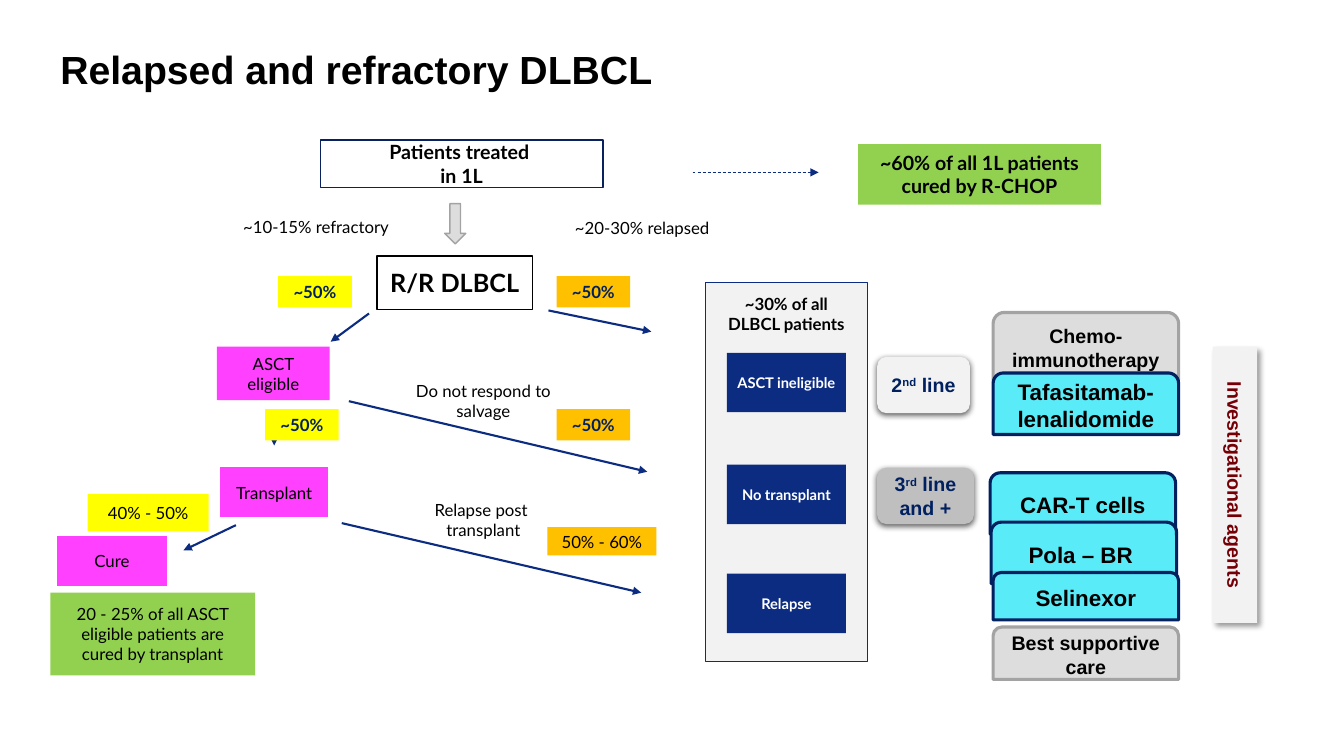
import pptx
import pptx.dml.color
import pptx.enum.dml
import pptx.enum.shapes
import pptx.enum.text
import pptx.oxml
import pptx.oxml.ns
import pptx.util

Inches = pptx.util.Inches
Pt = pptx.util.Pt
RGBColor = pptx.dml.color.RGBColor
SHAPE = pptx.enum.shapes.MSO_SHAPE
ANCHOR = pptx.enum.text.MSO_ANCHOR
ALIGN = pptx.enum.text.PP_ALIGN

BLACK = RGBColor(0x00, 0x00, 0x00)
WHITE = RGBColor(0xFF, 0xFF, 0xFF)
BLUE = RGBColor(0x0C, 0x2C, 0x81)
DEEP_BLUE = RGBColor(0x09, 0x21, 0x5F)
NAVY = RGBColor(0x00, 0x20, 0x60)
CYAN = RGBColor(0x59, 0xEB, 0xF8)
GREEN = RGBColor(0x92, 0xD0, 0x50)
YELLOW = RGBColor(0xFF, 0xFF, 0x00)
ORANGE = RGBColor(0xFF, 0xC0, 0x00)
MAGENTA = RGBColor(0xFF, 0x40, 0xFF)
DARK_RED = RGBColor(0x74, 0x00, 0x05)
PALE_GREY = RGBColor(0xF2, 0xF2, 0xF2)
LIGHT_GREY = RGBColor(0xDD, 0xDD, 0xDD)
MID_GREY = RGBColor(0xBF, 0xBF, 0xBF)
EDGE_GREY = RGBColor(0xA3, 0xA3, 0xA3)


class Diagram:
    """Style and current slide of the treatment pathway."""

    body_font = "Lato"
    heading_font = "Arial"

    def __init__(self, page):
        self.page = page

    def set_text(self, shape, text, size=12, color=BLACK, bold=False, font=None,
                 align=ALIGN.CENTER, anchor=ANCHOR.MIDDLE, side=0.1):
        """Put text in a shape; parts between ^ marks are superscript."""
        frame = shape.text_frame
        frame.word_wrap = True
        frame.vertical_anchor = anchor
        frame.margin_left = frame.margin_right = Inches(side)
        for index, line in enumerate(text.split("\n")):
            para = frame.add_paragraph() if index else frame.paragraphs[0]
            para.alignment = align
            para.font.name = font or self.body_font
            para.font.size = Pt(size)
            para.font.bold = bold
            para.font.color.rgb = color
            for part, words in enumerate(line.split("^")):
                span = para.add_run()
                span.text = words
                if part % 2:
                    span._r.get_or_add_rPr().set("baseline", "30000")

    def label(self, at, text, **style):
        box = self.page.shapes.add_textbox(*map(Inches, at))
        self.set_text(box, text, **style)
        return box

    def box(self, at, fill=None, text="", line=None, width=1, kind=SHAPE.RECTANGLE, **style):
        box = self.page.shapes.add_shape(kind, *map(Inches, at))
        box.shadow.inherit = False
        if fill is None:
            box.fill.background()
        else:
            box.fill.solid()
            box.fill.fore_color.rgb = fill
        if line is None:
            box.line.fill.background()
        else:
            box.line.color.rgb = line
            box.line.width = Pt(width)
        if text:
            self.set_text(box, text, **style)
        return box

    def cast_shadow(self, box, alpha, blur, distance, angle):
        effects = box._element.spPr.find(pptx.oxml.ns.qn("a:effectLst"))
        effects.append(pptx.oxml.parse_xml(
            f'<a:outerShdw {pptx.oxml.ns.nsdecls("a")} blurRad="{Pt(blur)}" dist="{Pt(distance)}" '
            f'dir="{angle * 60000}" algn="ctr" rotWithShape="0"><a:srgbClr val="000000">'
            f'<a:alpha val="{alpha * 1000}"/></a:srgbClr></a:outerShdw>'))

    def arrow(self, start, end, width=1.5, dash=None):
        arrow = self.page.shapes.add_connector(
            pptx.enum.shapes.MSO_CONNECTOR.STRAIGHT, *map(Inches, start + end))
        arrow.line.color.rgb = BLUE
        arrow.line.width = Pt(width)
        if dash:
            arrow.line.dash_style = dash
        namespace = pptx.oxml.ns.nsdecls("a")
        arrow.line._get_or_add_ln().append(
            pptx.oxml.parse_xml(f'<a:tailEnd {namespace} type="triangle"/>'))
        arrow._element.spPr.append(pptx.oxml.parse_xml(f"<a:effectLst {namespace}/>"))

    def therapy(self, at, text, fill=CYAN, line=NAVY, size=16):
        self.box(at, fill, text, line, 2.25, SHAPE.ROUND_2_SAME_RECTANGLE,
                 size=size, bold=True, font=self.heading_font)


def main():
    deck = pptx.Presentation()
    deck.slide_width, deck.slide_height = Inches(13.33), Inches(7.5)
    diagram = Diagram(deck.slides.add_slide(deck.slide_layouts[6]))

    # Title
    title = diagram.label((0.5, 0.03, 11.5, 0.94), "Relapsed and refractory DLBCL", size=28,
                          bold=True, font=diagram.heading_font,
                          align=ALIGN.LEFT, anchor=ANCHOR.BOTTOM)
    title.text_frame.paragraphs[0].line_spacing = 0.9

    # Arrows between the stages
    diagram.arrow((6.87, 1.71), (8.12, 1.71), 0.5, pptx.enum.dml.MSO_LINE.DASH)
    for start, end in [
        ((3.66, 3.11), (3.28, 3.39)),
        ((5.44, 3.08), (6.46, 3.29)),
        ((2.72, 4.09), (2.72, 4.42)),
        ((3.46, 3.98), (6.42, 4.68)),
        ((3.39, 5.19), (6.36, 5.88)),
        ((2.34, 5.21), (1.82, 5.46)),
    ]:
        diagram.arrow(start, end)

    # First line of treatment
    diagram.box((3.18, 1.39, 2.8, 0.47), WHITE, "Patients treated \nin 1L", DEEP_BLUE,
                size=14, bold=True)
    diagram.box((8.51, 1.43, 2.41, 0.6), GREEN, "~60% of all 1L patients cured by R-CHOP",
                size=14, bold=True)
    diagram.box((4.41, 2.02, 0.21, 0.4), LIGHT_GREY, line=EDGE_GREY, kind=SHAPE.DOWN_ARROW)
    diagram.box((3.74, 2.54, 1.54, 0.53), text="R/R DLBCL", line=BLACK, size=18, bold=True)

    # Transplant pathway
    diagram.box((2.15, 3.44, 1.12, 0.53), MAGENTA, "ASCT eligible")
    diagram.box((2.17, 4.62, 1.1, 0.53), MAGENTA, "Transplant", WHITE, 2.25)
    diagram.box((0.55, 5.3, 1.12, 0.53), MAGENTA, "Cure", WHITE, 2.25)
    diagram.box((0.5, 5.88, 2.03, 0.82), GREEN,
                "20 - 25% of all ASCT eligible patients are cured by transplant")

    # Shares at each branch
    for left, top, fill in [(2.76, 2.74, YELLOW), (5.52, 2.74, ORANGE),
                            (2.63, 4.06, YELLOW), (5.52, 4.06, ORANGE)]:
        diagram.box((left, top, 0.73, 0.31), fill, "~50%", color=NAVY, bold=True)
    diagram.box((0.87, 4.9, 1.2, 0.37), YELLOW, "40% - 50%")
    diagram.box((5.43, 5.23, 1.08, 0.28), ORANGE, "50% - 60%")

    # Branch labels
    diagram.label((2.17, 2.07, 1.93, 0.37), "~10-15% refractory")
    diagram.label((5.25, 2.08, 2.24, 0.37), "~20-30% relapsed")
    diagram.label((3.83, 3.79, 1.93, 0.37), "Do not respond to salvage")
    diagram.label((3.83, 4.97, 1.93, 0.37), "Relapse post \ntransplant")

    # Patients without a cure
    diagram.box((7, 2.8, 1.6, 3.76), PALE_GREY, line=BLUE, width=0.75)
    diagram.label((7.02, 2.89, 1.56, 0.44), "~30% of all DLBCL patients", bold=True)
    for top, text in [(3.5, "ASCT ineligible"), (4.61, "No transplant"), (5.69, "Relapse")]:
        diagram.box((7.21, top, 1.18, 0.59), BLUE, text, size=10.5, color=WHITE,
                    bold=True, side=0.05)

    # Lines of therapy
    for top, width, fill, text in [(3.54, 0.92, PALE_GREY, "2^nd^ line"),
                                   (4.64, 0.96, MID_GREY, "3^rd^ line\nand +")]:
        line_box = diagram.box((8.7, top, width, 0.56), fill, text,
                               kind=SHAPE.ROUNDED_RECTANGLE, size=14, color=NAVY,
                               bold=True, font=diagram.heading_font)
        diagram.cast_shadow(line_box, 63, 4.5, 1.5, 90)

    # Therapy options
    for top, height, text in [(3.1, 0.67, "Chemo-immunotherapy"),
                              (6.22, 0.52, "Best supportive care")]:
        diagram.therapy((9.85, top, 1.84, height), text, LIGHT_GREY, EDGE_GREY, 14)
    for left, top, height, text in [
        (9.85, 3.7, 0.61, "Tafasitamab-lenalidomide"),
        (9.82, 4.69, 0.61, "CAR-T cells"),
        (9.83, 5.18, 0.61, "Pola – BR "),
        (9.85, 5.68, 0.47, "Selinexor"),
    ]:
        diagram.therapy((left, top, 1.84, height), text)

    # Vertical banner
    banner = diagram.box((12.03, 3.44, 0.44, 2.74), PALE_GREY, "Investigational agents",
                         size=14, color=DARK_RED, bold=True, font=diagram.heading_font)
    banner.text_frame._txBody.bodyPr.set("vert", "vert")
    diagram.cast_shadow(banner, 40, 4, 3, 45)

    deck.save("out.pptx")


if __name__ == "__main__":
    main()
